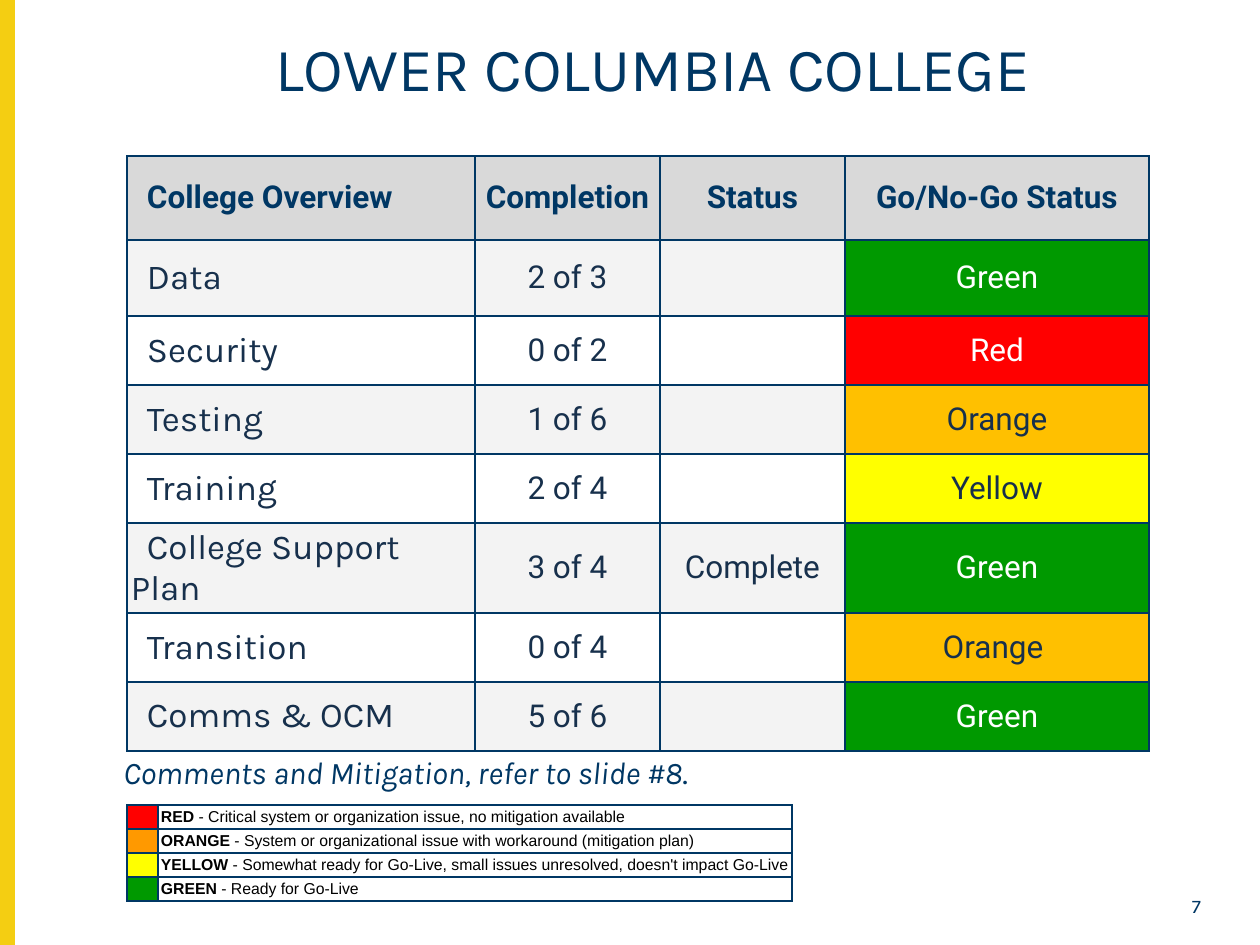
from dataclasses import dataclass

from lxml.etree import SubElement
from pptx import Presentation
from pptx.dml.color import RGBColor
from pptx.enum.shapes import MSO_SHAPE
from pptx.enum.text import MSO_ANCHOR, PP_ALIGN
from pptx.oxml.ns import qn
from pptx.util import Emu, Pt


@dataclass(frozen=True)
class Theme:
    navy: str = "003764"
    ink: str = "17304C"
    black: str = "000000"
    white: str = "FFFFFF"
    gold: str = "F4CE12"
    header: str = "D9D9D9"
    band: str = "F3F3F3"
    red: str = "FF0000"
    green: str = "009900"
    yellow: str = "FFFF00"
    status_orange: str = "FFC000"
    legend_orange: str = "FF9900"
    title_size: int = 35
    area_size: int = 20
    body_size: int = 18
    page_size: int = 11
    legend_size: int = 9
    display: str = "Karla"
    body: str = "Roboto"
    legend: str = "Arial"


T = Theme()
STATUS = {  # fill, text colour
    "Green": (T.green, T.white),
    "Red": (T.red, T.white),
    "Orange": (T.status_orange, T.ink),
    "Yellow": (T.yellow, T.ink),
}
HEADERS = ["College Overview", "Completion", "Status", "Go/No-Go Status"]
AREAS = [
    ("Data", "2 of 3", "", "Green"),
    ("Security", "0 of 2", "", "Red"),
    ("Testing", "1 of 6", "", "Orange"),
    ("Training", "2 of 4", "", "Yellow"),
    ("College Support Plan", "3 of 4", "Complete", "Green"),
    ("Transition", "0 of 4", "", "Orange "),
    ("Comms & OCM", "5 of 6", "", "Green"),
]
LEGEND = [
    ("RED", " - Critical system or organization issue, no mitigation available", T.red),
    ("ORANGE", " - System or organizational issue with workaround (mitigation plan)",
     T.legend_orange),
    ("YELLOW", " - Somewhat ready for Go-Live, small issues unresolved, "
     "doesn't impact Go-Live", T.yellow),
    ("GREEN", " - Ready for Go-Live", T.green),
]


def px(n):
    return Emu(round(n * 914400 / 126))


def rgb(value):
    return RGBColor.from_string(value)


def style_run(r, face, size, color, bold=False, italic=False):
    r.font.name = face
    r.font.size = Pt(size)
    r.font.color.rgb = rgb(color)
    r.font.bold = bold
    r.font.italic = italic


def add_bar(slide, left, top, width, height, color):
    sp = slide.shapes.add_shape(MSO_SHAPE.RECTANGLE, *map(px, (left, top, width, height)))
    sp.shadow.inherit = False
    sp.fill.solid()
    sp.fill.fore_color.rgb = rgb(color)
    sp.line.color.rgb = rgb(color)
    sp.line.width = Pt(1)


def add_text(slide, box, text, size, align=PP_ALIGN.LEFT, anchor=MSO_ANCHOR.TOP, italic=False):
    """Add a one-line navy text box and return its paragraph."""
    tf = slide.shapes.add_textbox(*map(px, box)).text_frame
    tf.word_wrap = True
    tf.vertical_anchor = anchor
    p = tf.paragraphs[0]
    p.text = text
    p.alignment = align
    style_run(p.runs[0], T.display, size, T.navy, italic=italic)
    return p


def add_grid(slide, left, top, cols, rows):
    """Add an unbanded table whose columns and rows have the given px sizes."""
    shape = slide.shapes.add_table(len(rows), len(cols), px(left), px(top),
                                   px(sum(cols)), px(sum(rows)))
    table = shape.table
    table.first_row = table.horz_banding = False
    for col, width in zip(table.columns, cols):
        col.width = px(width)
    for row, height in zip(table.rows, rows):
        row.height = px(height)
    return table


def format_cell(cell, fill, insets):
    """Set insets (left, top, right, bottom), 1 pt borders and fill; None is no fill."""
    cell.vertical_anchor = MSO_ANCHOR.MIDDLE
    (cell.margin_left, cell.margin_top,
     cell.margin_right, cell.margin_bottom) = map(px, insets)
    tc_pr = cell._tc.get_or_add_tcPr()
    for side in ("a:lnL", "a:lnR", "a:lnT", "a:lnB"):
        ln = SubElement(tc_pr, qn(side), w=str(Pt(1)))
        SubElement(SubElement(ln, qn("a:solidFill")), qn("a:srgbClr"), val=T.navy)
    if fill:
        cell.fill.solid()
        cell.fill.fore_color.rgb = rgb(fill)
    else:
        cell.fill.background()


def set_empty_size(cell, size):
    """Keep an empty cell from growing its row."""
    SubElement(cell.text_frame.paragraphs[0]._p, qn("a:endParaRPr"), sz=str(size * 100))


def fill_overview_cell(cell, text, fill, color, first, bold=False, face=T.body,
                       size=T.body_size):
    format_cell(cell, fill, (4, 3, 4, 3))
    if not text:
        set_empty_size(cell, size)
        return
    p = cell.text_frame.paragraphs[0]
    p.text = text
    if first:
        p._p.get_or_add_pPr().set("indent", str(px(16)))
    else:
        p.alignment = PP_ALIGN.CENTER
    style_run(p.runs[0], face, size, color, bold)


def add_overview(slide):
    table = add_grid(slide, 127, 156, [348, 185, 185, 304], [84, 76] + [69] * 6)
    for c, text in enumerate(HEADERS):
        fill_overview_cell(table.cell(0, c), text, T.header, T.navy, c == 0, bold=True)
    for r, (area, done, state, go) in enumerate(AREAS, 1):
        band = T.band if r % 2 else T.white
        fill_overview_cell(table.cell(r, 0), area, band, T.ink, True,
                           face=T.display, size=T.area_size)
        fill_overview_cell(table.cell(r, 1), done, band, T.ink, False)
        fill_overview_cell(table.cell(r, 2), state, band, T.ink, False)
        fill_overview_cell(table.cell(r, 3), go, *STATUS[go.strip()], False)


def add_legend(slide):
    table = add_grid(slide, 127, 805, [31, 634], [24] * len(LEGEND))
    for row, (name, meaning, color) in enumerate(LEGEND):
        swatch, label = table.cell(row, 0), table.cell(row, 1)
        format_cell(swatch, color, (3, 0, 0, 0))
        set_empty_size(swatch, T.legend_size)
        format_cell(label, None, (3, 0, 0, 0))
        p = label.text_frame.paragraphs[0]
        for text, bold in ((name, True), (meaning, False)):
            r = p.add_run()
            r.text = text
            style_run(r, T.legend, T.legend_size, T.black, bold)


def main():
    prs = Presentation()
    prs.slide_width, prs.slide_height = px(1260), px(945)
    slide = prs.slides.add_slide(prs.slide_layouts[6])
    add_bar(slide, 0, 0, 14, 945, T.gold)
    title = add_text(slide, (127, 30, 1052, 84), "LOWER COLUMBIA COLLEGE", T.title_size,
                     PP_ALIGN.CENTER, MSO_ANCHOR.MIDDLE)
    title.line_spacing = 0.9
    add_overview(slide)
    note = add_text(slide, (111, 747, 843, 50), "Comments and Mitigation, refer to slide #8",
                    T.body_size, italic=True)
    stop = note.add_run()
    stop.text = "."
    style_run(stop, T.display, T.body_size, T.navy)
    add_text(slide, (1155, 888, 63, 26), " 7 ", T.page_size, PP_ALIGN.RIGHT)
    add_legend(slide)
    prs.save("out.pptx")


if __name__ == "__main__":
    main()
